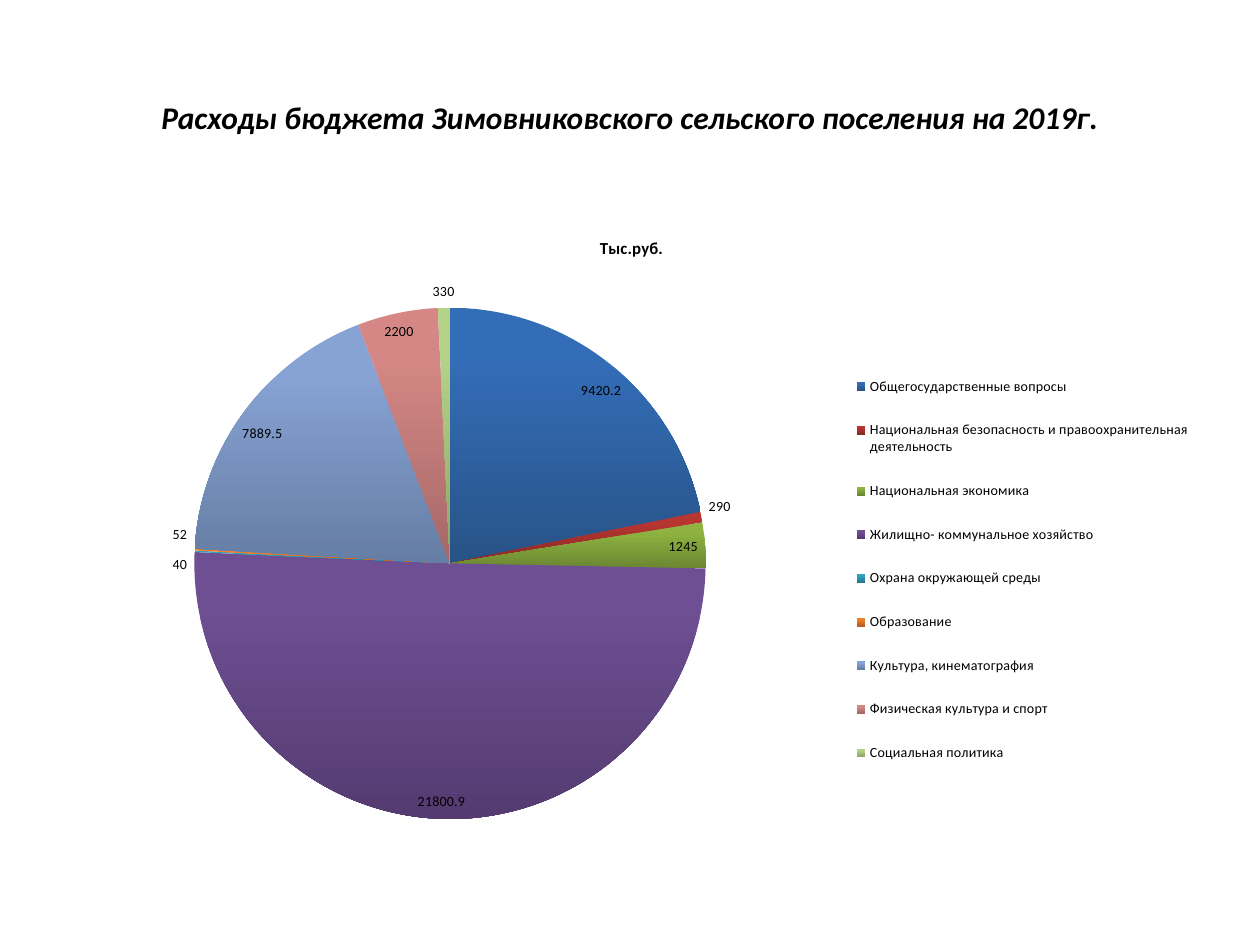
from pptx import Presentation
from pptx.chart.data import CategoryChartData
from pptx.dml.color import RGBColor
from pptx.enum.chart import XL_CHART_TYPE, XL_LABEL_POSITION, XL_LEGEND_POSITION
from pptx.enum.text import MSO_ANCHOR, PP_ALIGN
from pptx.oxml import parse_xml
from pptx.oxml.ns import nsdecls, qn
from pptx.util import Cm, Pt

PIE = XL_CHART_TYPE.PIE
FIT = XL_LABEL_POSITION.BEST_FIT
RIGHT = XL_LEGEND_POSITION.RIGHT
MIDDLE = MSO_ANCHOR.MIDDLE
CENTER = PP_ALIGN.CENTER

BLACK = RGBColor(0x00, 0x00, 0x00)
BLUE = RGBColor(0x33, 0x6D, 0xB7), RGBColor(0x28, 0x53, 0x87)
RED = RGBColor(0xB7, 0x36, 0x32), RGBColor(0x88, 0x29, 0x26)
GREEN = RGBColor(0x8F, 0xB3, 0x41), RGBColor(0x6B, 0x87, 0x32)
PURPLE = RGBColor(0x6E, 0x4F, 0x93), RGBColor(0x54, 0x3B, 0x70)
TEAL = RGBColor(0x2F, 0xA3, 0xC1), RGBColor(0x24, 0x7A, 0x90)
ORANGE = RGBColor(0xF0, 0x80, 0x2A), RGBColor(0xB7, 0x5F, 0x1C)
SKY = RGBColor(0x87, 0xA3, 0xD4), RGBColor(0x66, 0x7E, 0xA5)
ROSE = RGBColor(0xD4, 0x87, 0x85), RGBColor(0xA5, 0x68, 0x67)
LIME = RGBColor(0xB3, 0xD1, 0x87), RGBColor(0x8D, 0xA6, 0x68)

COSTS = [
    ("Общегосударственные вопросы", 9420.2, BLUE),
    ("Национальная безопасность и правоохранительная деятельность", 290, RED),
    ("Национальная экономика", 1245, GREEN),
    ("Жилищно- коммунальное хозяйство", 21800.9, PURPLE),
    ("Охрана окружающей среды", 40, TEAL),
    ("Образование", 52, ORANGE),
    ("Культура, кинематография", 7889.5, SKY),
    ("Физическая культура и спорт", 2200, ROSE),
    ("Социальная политика", 330, LIME),
]


class Deck:
    """Holds the style and the current slide, and adds each kind of element."""

    def __init__(self, face):
        self.face = face
        self.prs = Presentation()
        self.prs.slide_width, self.prs.slide_height = Cm(25.4), Cm(19.05)
        self.slide = self.prs.slides.add_slide(self.prs.slide_layouts[5])

    def style(self, font, size, bold=False, slant=False):
        font.name, font.size = self.face, Pt(size)
        font.bold, font.italic = bold, slant
        font.color.rgb = BLACK

    def title(self, text, box):
        shape = self.slide.shapes.title
        shape.left, shape.top, shape.width, shape.height = map(Cm, box)
        frame = shape.text_frame
        frame.vertical_anchor = MIDDLE
        para = frame.paragraphs[0]
        para.alignment = CENTER
        run = para.add_run()
        run.text = text
        self.style(run.font, 18, bold=True, slant=True)

    def place(self, node, index, box, inner=False):
        for old in node.findall(qn("c:layout")):
            node.remove(old)
        target = '<c:layoutTarget val="inner"/>' if inner else ""
        modes = '<c:xMode val="edge"/><c:yMode val="edge"/>'
        sizes = "".join(f'<c:{k} val="{v}"/>' for k, v in zip("xywh", box))
        node.insert(index, parse_xml(
            f'<c:layout {nsdecls("c")}><c:manualLayout>{target}{modes}{sizes}'
            "</c:manualLayout></c:layout>"))

    def shade(self, fill, pair):
        fill.gradient()
        fill.gradient_angle = 270
        for stop, color, spot in zip(fill.gradient_stops, pair, (0.2, 1)):
            stop.color.rgb, stop.position = color, spot

    def pie(self, name, rows, box):
        data = CategoryChartData()
        data.categories = [row[0] for row in rows]
        data.add_series(name, [row[1] for row in rows])
        chart = self.slide.shapes.add_chart(PIE, *map(Cm, box), data).chart
        self.style(chart.font, 8)

        chart.has_title = True
        run = chart.chart_title.text_frame.paragraphs[0].add_run()
        run.text = name
        self.style(run.font, 9.6, bold=True)

        chart.has_legend = True
        legend = chart.legend
        legend.position, legend.include_in_layout = RIGHT, False
        self.style(legend.font, 8)

        plot = chart.plots[0]
        plot.vary_by_categories = True
        plot.has_data_labels = True
        labels = plot.data_labels
        labels.show_value, labels.position = True, FIT
        self.style(labels.font, 8)
        for i, row in enumerate(rows):
            self.shade(plot.series[0].points[i].format.fill, row[2])

        area = chart.element.find(".//" + qn("c:plotArea"))
        self.place(area, 0, (0.11, 0.15, 0.46, 0.82), inner=True)
        self.place(chart.element.find(".//" + qn("c:legend")), 1,
                   (0.69, 0.22, 0.31, 0.7))


def main():
    deck = Deck("Calibri")
    deck.title("Расходы бюджета Зимовниковского сельского поселения на 2019г.",
               (1.27, 0.76, 22.86, 3.18))
    deck.pie("Тыс.руб.", COSTS, (1.3, 4.32, 22.86, 12.57))
    deck.prs.save("out.pptx")


if __name__ == "__main__":
    main()
